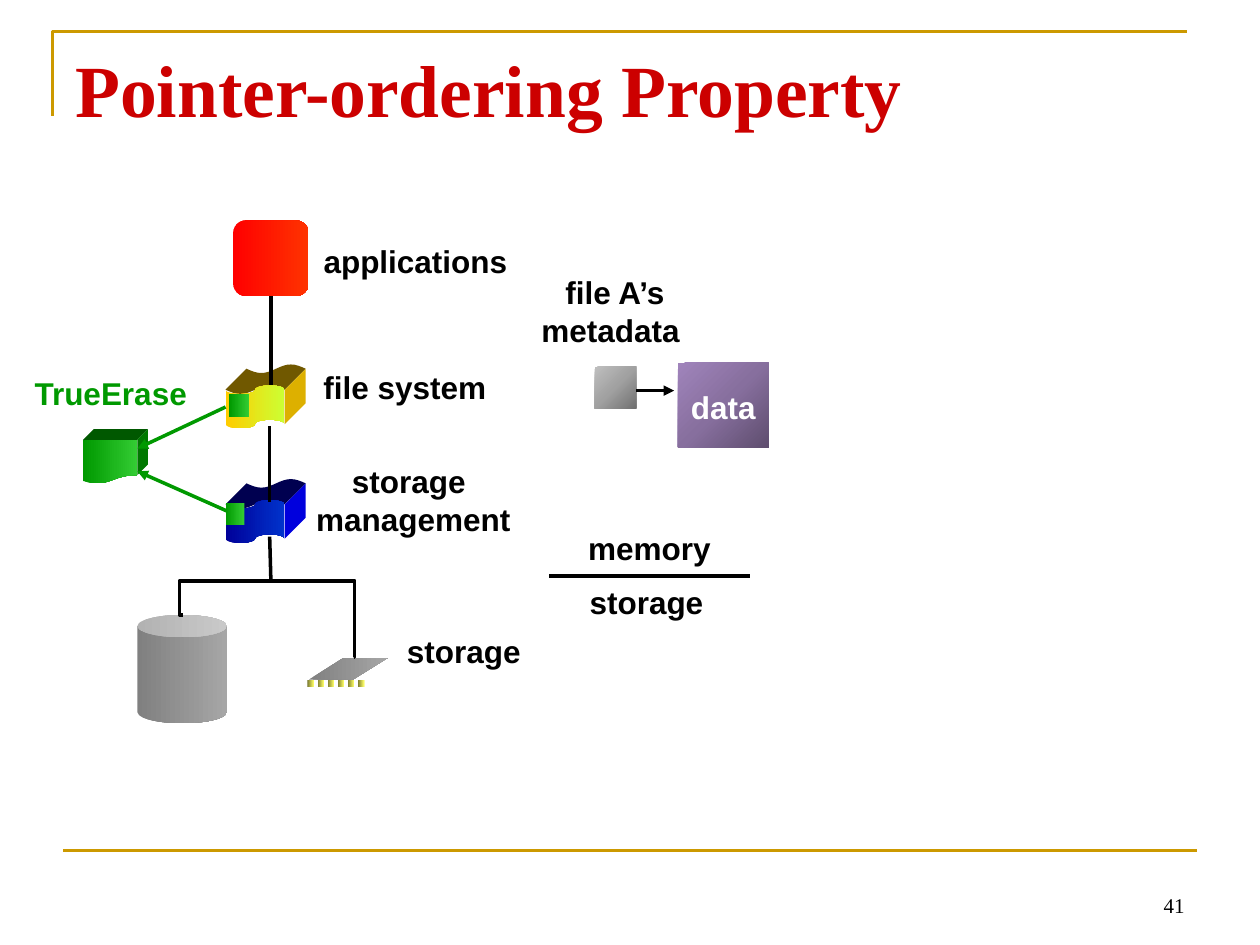
"""Build the slide on the pointer-ordering property of a storage stack."""
from copy import deepcopy
from math import pi, sin

from pptx import Presentation
from pptx.dml.color import RGBColor
from pptx.enum import shapes, text
from pptx.oxml import parse_xml
from pptx.oxml.ns import nsdecls, qn
from pptx.util import Pt

BLACK = RGBColor(0, 0, 0)
WHITE = RGBColor(255, 255, 255)
GOLD = RGBColor(0xCC, 0x99, 0x00)
CRIMSON = RGBColor(0xCC, 0x00, 0x00)
GREEN = RGBColor(0x00, 0x99, 0x00)
REDS = RGBColor(0xFF, 0, 0), RGBColor(0xFF, 0x33, 0)
GREYS = RGBColor(0x80, 0x80, 0x80), RGBColor(0xA6, 0xA6, 0xA6)
PINS = RGBColor(0x76, 0x76, 0x2F), RGBColor(0xFF, 0xFF, 0x66)
BLUES = RGBColor(0, 0, 0x99), RGBColor(0, 0x33, 0xCC)
YELLOWS = RGBColor(0xFF, 0xCC, 0), RGBColor(0xCC, 0xFF, 0x33)
GREENS = GREEN, RGBColor(0x33, 0xCC, 0x33)
SILVERS = (RGBColor(0x71, 0x71, 0x71), RGBColor(0xA1, 0xA1, 0xA1), RGBColor(0xBF, 0xBF, 0xBF))
PURPLES = (RGBColor(0x5F, 0x4E, 0x6F), RGBColor(0x87, 0x6F, 0x9E), RGBColor(0xA0, 0x84, 0xBB))
DARK_YELLOWS = RGBColor(0x70, 0x58, 0), RGBColor(0xDD, 0xB0, 0)
DARK_BLUES = RGBColor(0, 0, 0x50), RGBColor(0, 0, 0xDD)
DARK_GREENS = RGBColor(0, 0x58, 0), RGBColor(0, 0x78, 0)

LEFT, CENTER, RIGHT = text.PP_ALIGN.LEFT, text.PP_ALIGN.CENTER, text.PP_ALIGN.RIGHT
KIND = shapes.MSO_SHAPE

TAPES = [((128.9, 220.3, 33.8, 24.5), YELLOWS, DARK_YELLOWS),
         ((128.9, 285.8, 33.8, 24.5), BLUES, DARK_BLUES)]
TAPE_DEPTH = 12
DOCUMENT = (47.5, 251.3, 31, 25.2)
DOCUMENT_DEPTH = 6
PIN_COUNT, PIN_LEFT, PIN_STEP = 6, 175.7, 5.75

BLOCKS = [
    (KIND.RECTANGLE, (339.8, 209.5, 23.8, 23.8), SILVERS),
    (KIND.RECTANGLE, (387.4, 207.4, 51.8, 48.2), PURPLES),
    (KIND.ROUNDED_RECTANGLE, (133.2, 126, 43.2, 43.2), REDS),
    (KIND.CAN, (78.5, 351.4, 51.1, 61.9), GREYS),
    (KIND.PARALLELOGRAM, (176.4, 375.8, 45.4, 12.6), GREYS),
]
TAGS = [(128.9, 287.3, 10.8, 13), (131, 225.4, 11.5, 13)]

LINES = [
    ((36, 486), (684, 486), GOLD, 1.5, False),
    ((363.6, 223.2), (385.2, 223.2), BLACK, 2, True),
    ((154.8, 169.2), (154.8, 220.3), BLACK, 2, False),
    ((154.1, 243.4), (154.1, 286.6), BLACK, 2, False),
    ((154.1, 306.7), (154.8, 331.9), BLACK, 2, False),
    ((128.9, 232.6), (78.5, 256.3), GREEN, 2, True),
    ((130.3, 292.3), (78.5, 269.3), GREEN, 2, True),
    ((313.9, 329), (428.4, 329), BLACK, 2.25, False),
]
BRANCHES = [((154.8, 331.9), (202.3, 375.8), 1.009),
            ((154.8, 331.9), (104.4, 351.4), 1.035)]

LABELS = [
    (["applications"], (177.8, 134.6, 151, 37), LEFT, BLACK),
    (["file system"], (177.8, 206.6, 136, 37), LEFT, BLACK),
    (["storage ", "management"], (172.8, 260.6, 126.7, 51), CENTER, BLACK),
    (["storage"], (225.4, 357.8, 107, 37), LEFT, BLACK),
    (["TrueErase"], (12.2, 210.2, 102.2, 29), CENTER, GREEN),
    (["file A’s", "metadata "], (301.7, 152.6, 99.4, 51), CENTER, BLACK),
    (["data"], (387.4, 218.2, 51.8, 29), CENTER, WHITE),
    (["memory"], (329, 298.8, 95, 29), LEFT, BLACK),
    (["storage"], (329.8, 329.8, 95, 29), LEFT, BLACK),
]

prs = Presentation()
prs.slide_width, prs.slide_height = Pt(720), Pt(540)
s = prs.slides.add_slide(prs.slide_layouts[6])


def paint(sp, colors):
    """Fill a shape with a solid, a horizontal or a corner gradient."""
    sp.shadow.inherit = False
    sp.line.fill.background()
    if len(colors) == 1:
        sp.fill.solid()
        sp.fill.fore_color.rgb = colors[0]
        return
    sp.fill.gradient()
    sp.fill.gradient_angle = 0
    stops = sp.fill.gradient_stops
    stops[0].color.rgb, stops[1].color.rgb = colors[0], colors[-1]
    if len(colors) == 3:
        grad = sp._element.spPr.find(qn("a:gradFill"))
        first = grad.find(qn("a:gsLst"))[0]
        middle = deepcopy(first)
        middle.set("pos", "50000")
        middle[0].set("val", str(colors[1]))
        first.addnext(middle)
        grad.replace(grad.find(qn("a:lin")), parse_xml(
            f'<a:path {nsdecls("a")} path="circle"><a:fillToRect l="100000" t="100000"/></a:path>'))


def block(kind, box, colors):
    sp = s.shapes.add_shape(kind, *map(Pt, box))
    paint(sp, colors)
    return sp


def outline(points, closed=True):
    pts = [(Pt(x), Pt(y)) for x, y in points]
    fb = s.shapes.build_freeform(*pts[0])
    fb.add_line_segments(pts[1:], close=closed)
    return fb.convert_to_shape()


def extrude(edge, depth, colors):
    """Sweep the top and right edges up and to the right."""
    for side, color in ((edge[:-1], colors[0]), (edge[-2:], colors[1])):
        back = [(x + depth, y - depth) for x, y in reversed(side)]
        paint(outline(side + back), (color,))


def connect(start, end, color, width, kind=shapes.MSO_CONNECTOR.STRAIGHT):
    c = s.shapes.add_connector(kind, *map(Pt, start + end))
    c.line.color.rgb, c.line.width = color, Pt(width)
    c._element.spPr.append(parse_xml(f'<a:effectLst {nsdecls("a")}/>'))
    return c


def write(lines, box, align, color, size=18, font="Arial", bold=True, anchor=text.MSO_ANCHOR.TOP):
    tf = s.shapes.add_textbox(*map(Pt, box)).text_frame
    tf.word_wrap = align != CENTER
    tf.vertical_anchor = anchor
    for i, line in enumerate(lines):
        p = tf.add_paragraph() if i else tf.paragraphs[0]
        p.alignment = align
        r = p.add_run()
        r.text = line
        r.font.size, r.font.name, r.font.bold = Pt(size), font, bold
        r.font.color.rgb = color


frame = outline([(30.2, 66.2), (30.2, 18), (678.2, 18)], closed=False)
frame.fill.background()
frame.shadow.inherit = False
frame.line.color.rgb, frame.line.width = GOLD, Pt(1.5)
write(["Pointer-ordering Property"], (36, 21.6, 648, 108), LEFT, CRIMSON, 42, "Times New Roman")
write(["41"], (516.2, 491.8, 167.8, 36), RIGHT, BLACK, 12, "Times New Roman", False,
      text.MSO_ANCHOR.BOTTOM)

for kind, box, colors in BLOCKS:
    sp = block(kind, box, colors)
    if kind == KIND.PARALLELOGRAM:
        sp.adjustments[0] = 0.914 * 2 if box[2] < box[3] else 1.6
for i in range(PIN_COUNT):
    block(KIND.RECTANGLE, (PIN_LEFT + i * PIN_STEP, 388.8, 3.6, 3.6), PINS)

for (x, y, w, h), front, dark in TAPES:
    wave = [(x + w * i / 16, y + 0.1 * h * (1 + sin(pi * i / 8))) for i in range(17)]
    extrude(wave + [(x + w, y + 0.1 * h), (x + w, y + 0.9 * h)], TAPE_DEPTH, dark)
    block(KIND.FLOWCHART_PUNCHED_TAPE, (x, y, w, h), front)
x, y, w, h = DOCUMENT
extrude([(x, y), (x + w, y), (x + w, y), (x + w, y + 0.8 * h)], DOCUMENT_DEPTH, DARK_GREENS)
block(KIND.FLOWCHART_DOCUMENT, DOCUMENT, GREENS)

for start, end, color, width, arrow in LINES:
    c = connect(start, end, color, width)
    if arrow:
        c.line._get_or_add_ln().append(parse_xml(f'<a:tailEnd {nsdecls("a")} type="triangle"/>'))
for start, end, bend in BRANCHES:
    c = connect(start, end, BLACK, 2, shapes.MSO_CONNECTOR.ELBOW)
    guides = c._element.spPr.find(qn("a:prstGeom")).get_or_add_avLst()
    guides.append(parse_xml(
        f'<a:gd {nsdecls("a")} name="adj1" fmla="val {round(bend * 100000)}"/>'))
for box in TAGS:
    block(KIND.RECTANGLE, box, GREENS)
for label in LABELS:
    write(*label)

prs.save("out.pptx")
